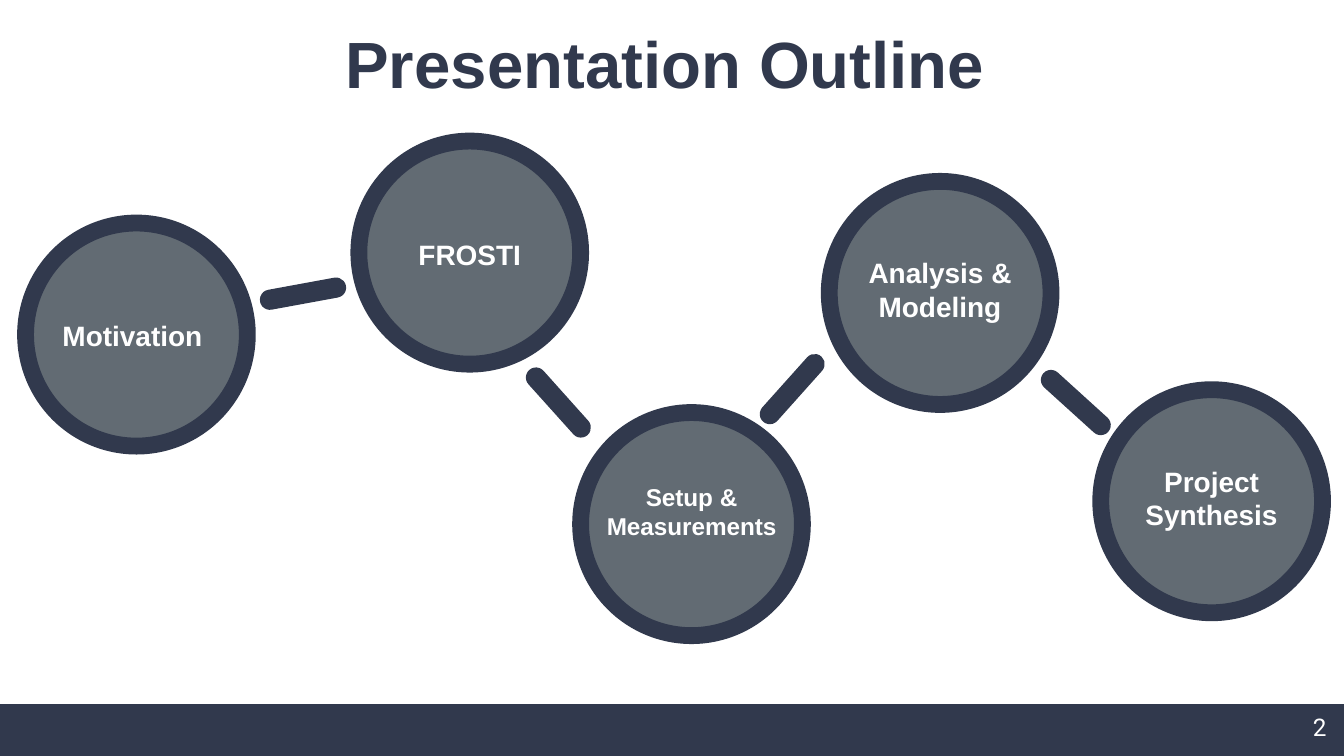
"""Build a presentation outline slide with five linked topic circles."""
from pptx import Presentation
from pptx.dml.color import RGBColor
from pptx.enum.shapes import MSO_SHAPE as Shape
from pptx.enum.text import MSO_ANCHOR as Anchor, MSO_AUTO_SIZE as Fit, PP_ALIGN as Align
from pptx.util import Inches, Pt

NAVY, GRAY, WHITE = "31394D", "626B73", "FFFFFF"
WIDE = 10
HIGH = WIDE * 9 / 16
BAR_TOP = 5.24
CIRCLE = 1.65, 1.66
LINK = 0.65, 0.15
LABEL_HIGH = 0.93

# left, top of circle; label, label top, label width, size
TOPICS = [
    (0.19, 1.66, "Motivation ", 2.03, 1.3, 15),
    (2.67, 1.05, "FROSTI", 1.43, 1.48, 15),
    (4.32, 3.07, "Setup & Measurements", 3.34, 1.48, 13),
    (6.17, 1.35, "Analysis & Modeling", 1.69, 1.3, 15),
    (8.19, 2.9, "Project Synthesis", 3.24, 1.3, 15),
]
LINKS = [
    (1.93, 2.11, -10.4),
    (3.83, 2.92, 48.1),
    (5.57, 2.82, -48.2),
    (7.68, 2.92, 42.2),
]


def color(code):
    return RGBColor.from_string(code)


def draw(kind, left, top, wide, high, fill):
    shape = slide.shapes.add_shape(kind, *map(Inches, (left, top, wide, high)))
    shape.shadow.inherit = False
    shape.fill.solid()
    shape.fill.fore_color.rgb = color(fill)
    shape.line.fill.background()
    return shape


def write(box, text, size, code, font="Arial", bold=True, align=Align.LEFT, anchor=Anchor.TOP):
    frame = box.text_frame
    frame.text = text
    frame.word_wrap = True
    frame.auto_size = Fit.NONE
    frame.vertical_anchor = anchor
    frame.margin_left = frame.margin_right = Inches(0.1)
    frame.margin_top = frame.margin_bottom = Inches(0.1)
    line = frame.paragraphs[0]
    line.alignment = align
    face = line.runs[0].font
    face.name, face.size, face.bold = font, Pt(size), bold
    face.color.rgb = color(code)


def add_text(left, top, wide, high):
    return slide.shapes.add_textbox(*map(Inches, (left, top, wide, high)))


deck = Presentation()
deck.slide_width, deck.slide_height = Inches(WIDE), Inches(HIGH)
slide = deck.slides.add_slide(deck.slide_layouts[5])

title = slide.shapes.title
title.left, title.top, title.width, title.height = map(Inches, (2.47, 0.07, 5.05, 0.69))
write(title, "Presentation Outline", 35, NAVY)

draw(Shape.RECTANGLE, 0, BAR_TOP, WIDE, HIGH - BAR_TOP, NAVY)

for left, top, angle in LINKS:
    link = draw(Shape.ROUNDED_RECTANGLE, left, top, *LINK, NAVY)
    link.adjustments[0] = 0.5
    link.rotation = angle

for left, top, text, label_top, wide, size in TOPICS:
    circle = draw(Shape.OVAL, left, top, *CIRCLE, GRAY)
    circle.line.color.rgb = color(NAVY)
    circle.line.width = Pt(9)
    label = add_text(left + (CIRCLE[0] - wide) / 2, label_top, wide, LABEL_HIGH)
    write(label, text, size, WHITE, align=Align.CENTER, anchor=Anchor.MIDDLE)

write(add_text(9.67, 5.2, 0.33, 0.42), "2", 13, WHITE, font="Roboto", bold=False)

deck.save("out.pptx")
